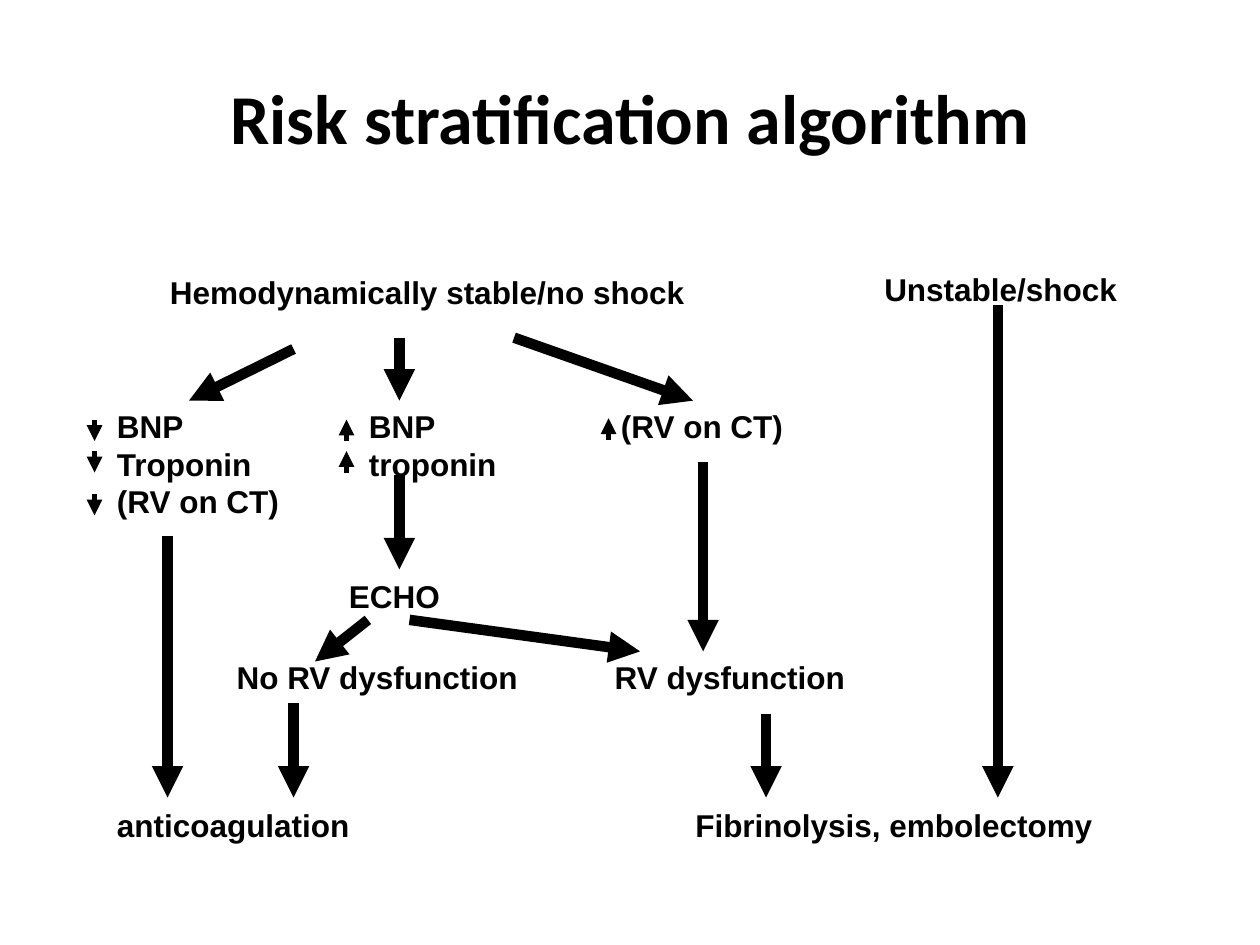
from lxml import etree
from pptx import Presentation
from pptx.dml.color import RGBColor
from pptx.enum import shapes, text
from pptx.oxml.ns import qn
from pptx.util import Inches, Pt

THEME = {
    "ink": RGBColor(0, 0, 0),
    "background": RGBColor(255, 255, 255),
    "title": {"name": "Calibri", "size": Pt(40), "bold": True},
    "label": {"name": "Arial", "size": Pt(18), "bold": True},
    "flow_width": Pt(6),
    "marker_width": Pt(3),
}

TITLE = ("Risk stratification algorithm", 0.5, 0.3, 9, 1.25)

# Lines of text, left, top, width, height; tabs line up the columns
LABELS = [
    (["Hemodynamically stable/no shock"], 1.25, 2.12, 4.4, 0.4),
    (["Unstable/shock"], 6.92, 2.09, 2.1, 0.4),
    (["BNP\t\tBNP\t\t(RV on CT)", "Troponin\ttroponin", "(RV on CT)"], 0.83, 3.18, 5.6, 1),
    (["ECHO"], 2.67, 4.53, 0.95, 0.4),
    (["No RV dysfunction\tRV dysfunction"], 1.78, 5.17, 5.1, 0.4),
    (["anticoagulation"], 0.83, 6.35, 2.1, 0.4),
    (["Fibrinolysis, embolectomy"], 5.42, 6.35, 3.45, 0.4),
]
TAB_STOPS = [1, 2, 3, 4]

# Start x, start y, end x, end y
FLOW_ARROWS = [
    (2.33, 2.77, 1.5, 3.18),    # stable -> low markers
    (3.17, 2.68, 3.17, 3.18),   # stable -> raised markers
    (4.08, 2.68, 5.5, 3.18),    # stable -> RV on CT
    (3.17, 3.77, 3.17, 4.52),   # raised markers -> ECHO
    (2.92, 4.92, 2.5, 5.25),    # ECHO -> no RV dysfunction
    (3.25, 4.92, 5.08, 5.17),   # ECHO -> RV dysfunction
    (5.58, 3.67, 5.58, 5.17),   # RV on CT -> RV dysfunction
    (1.33, 4.25, 1.33, 6.33),   # low markers -> anticoagulation
    (2.33, 5.58, 2.33, 6.33),   # no RV dysfunction -> anticoagulation
    (6.08, 5.67, 6.08, 6.33),   # RV dysfunction -> fibrinolysis
    (7.92, 2.42, 7.92, 6.33),   # unstable -> fibrinolysis
]

# Centre x, top y and direction of the small rise and fall markers
MARKER_LENGTH = 0.17
MARKERS = [
    (0.75, 3.33, "down"), (0.75, 3.58, "down"), (0.75, 3.92, "down"),
    (2.75, 3.33, "up"), (2.75, 3.58, "up"),
    (4.83, 3.32, "up"),
]


def add_tab_stops(paragraph):
    tab_list = etree.SubElement(paragraph._p.get_or_add_pPr(), qn("a:tabLst"))
    for stop in TAB_STOPS:
        etree.SubElement(tab_list, qn("a:tab"), pos=str(Inches(stop)), algn="l")


def add_text(slide, lines, box, font_format, frame_format, alignment):
    frame = slide.shapes.add_textbox(*map(Inches, box)).text_frame
    for name, value in frame_format.items():
        setattr(frame, name, value)
    frame.text = "\n".join(lines)
    for paragraph in frame.paragraphs:
        paragraph.alignment = alignment
        if "\t" in paragraph.text:
            add_tab_stops(paragraph)
        font = paragraph.runs[0].font
        font.color.rgb = THEME["ink"]
        for name, value in font_format.items():
            setattr(font, name, value)


def add_arrow(slide, ends, width):
    arrow = slide.shapes.add_connector(
        shapes.MSO_CONNECTOR.STRAIGHT, *map(Inches, ends))
    arrow.line.color.rgb = THEME["ink"]
    arrow.line.width = width
    line = arrow.line._get_or_add_ln()
    etree.SubElement(line, qn("a:tailEnd"), type="triangle")
    etree.SubElement(arrow._element.spPr, qn("a:effectLst"))


def main():
    presentation = Presentation()
    presentation.slide_width, presentation.slide_height = Inches(10), Inches(7.5)
    slide = presentation.slides.add_slide(presentation.slide_layouts[6])
    slide.background.fill.solid()
    slide.background.fill.fore_color.rgb = THEME["background"]

    title, *title_box = TITLE
    add_text(slide, [title], title_box, THEME["title"],
             {"word_wrap": True, "vertical_anchor": text.MSO_ANCHOR.MIDDLE},
             text.PP_ALIGN.CENTER)
    for lines, *box in LABELS:
        add_text(slide, lines, box, THEME["label"],
                 {"word_wrap": True, "auto_size": text.MSO_AUTO_SIZE.NONE},
                 text.PP_ALIGN.LEFT)

    for ends in FLOW_ARROWS:
        add_arrow(slide, ends, THEME["flow_width"])
    for x, top, direction in MARKERS:
        start, end = top, top + MARKER_LENGTH
        if direction == "up":
            start, end = end, start
        add_arrow(slide, (x, start, x, end), THEME["marker_width"])

    presentation.save("out.pptx")


if __name__ == "__main__":
    main()
